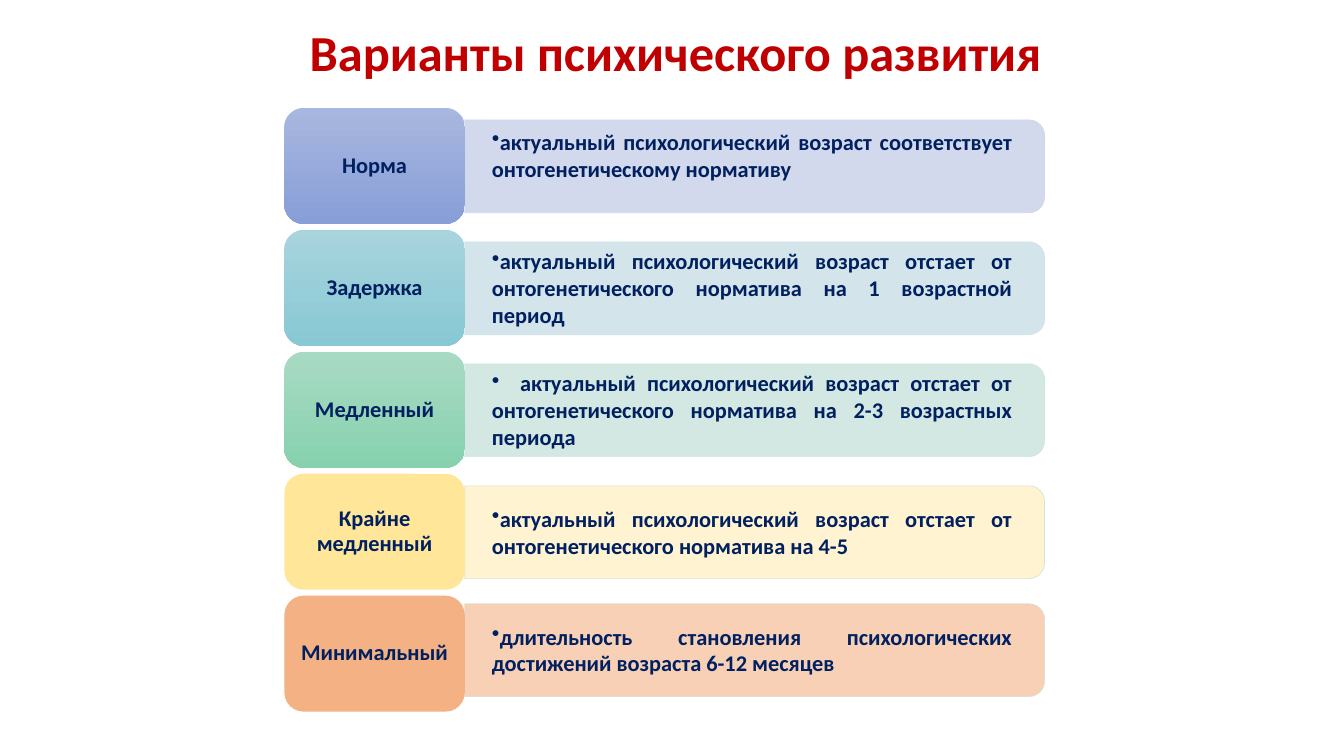
from lxml import etree
from pptx import Presentation
from pptx.dml.color import RGBColor
from pptx.enum.shapes import MSO_SHAPE
from pptx.enum.text import MSO_ANCHOR, MSO_AUTO_SIZE, PP_ALIGN
from pptx.oxml.ns import qn
from pptx.util import Inches, Pt

ROUNDED = MSO_SHAPE.ROUNDED_RECTANGLE
ROUNDED_TOP = MSO_SHAPE.ROUND_2_SAME_RECTANGLE
MIDDLE, TOP = MSO_ANCHOR.MIDDLE, MSO_ANCHOR.TOP
CENTER, JUSTIFY = PP_ALIGN.CENTER, PP_ALIGN.JUSTIFY
NO_AUTOFIT = MSO_AUTO_SIZE.NONE

FONT = "Calibri"
COLORS = {"title": "C00000", "text": "002060"}

TILE_LEFT, TILE_TOP, TILE_WIDTH, TILE_HEIGHT = 2.82, 1.07, 1.79, 1.15
ROW_PITCH = 1.21
BAR_LEFT, BAR_WIDTH, BAR_HEIGHT = 4.61, 5.75, 0.92
TEXT_WIDTH, TEXT_HEIGHT = 5.7, 0.83
FIRST_LINE_GAP = 0.28

# label, description, tile colours, bar colour, bar outline, bar offset
VARIANTS = [
    ("Норма",
     "актуальный психологический возраст соответствует онтогенетическому нормативу",
     ("A8B7DF", "889ED7"), "CFD5EA", "CFD5EA", 0.12),
    ("Задержка",
     "актуальный психологический возраст отстает от онтогенетического норматива "
     "на 1 возрастной период",
     ("A8D4DD", "88C8D4"), "CFE2E8", "CFE2E8", 0.12),
    ("Медленный",
     "\tактуальный психологический возраст отстает от онтогенетического норматива "
     "на 2-3 возрастных периода",
     ("A8DAC3", "87D1AF"), "CFE6E0", "CFE6E0", 0.12),
    ("Крайне медленный",
     "актуальный психологический возраст отстает от онтогенетического норматива на 4-5",
     ("FFE699",), "FFF2CC", "CFE5D4", 0.12),
    ("Минимальный",
     "длительность становления психологических достижений возраста 6-12 месяцев",
     ("F4B183",), "F8CBAD", "D5E3CF", 0.08),
]


class SlideBuilder:
    def __init__(self, slide):
        self.slide = slide

    def fill_text(self, frame, text, size, color, align, insets, anchor=MIDDLE):
        """Fill a text frame with one bold paragraph; insets run left, top, right, bottom."""
        frame.word_wrap = True
        frame.auto_size = NO_AUTOFIT
        frame.vertical_anchor = anchor
        (frame.margin_left, frame.margin_top,
         frame.margin_right, frame.margin_bottom) = map(Inches, insets)
        frame.text = text
        paragraph = frame.paragraphs[0]
        paragraph.alignment = align
        font = paragraph.runs[0].font
        font.name, font.size, font.bold = FONT, Pt(size), True
        font.color.rgb = RGBColor.from_string(COLORS[color])
        return paragraph

    def title(self, text):
        heading = self.slide.shapes.title
        heading.left, heading.top = Inches(2.26), Inches(0.13)
        heading.width, heading.height = Inches(9), Inches(0.84)
        paragraph = self.fill_text(heading.text_frame, text, 36, "title", CENTER,
                                   (0.1, 0.05, 0.1, 0.05))
        paragraph.line_spacing = 0.9

    def tile(self, label, top, colors):
        tile = self.slide.shapes.add_shape(
            ROUNDED, Inches(TILE_LEFT), Inches(top), Inches(TILE_WIDTH), Inches(TILE_HEIGHT))
        tile.shadow.inherit = False
        tile.line.fill.background()
        if len(colors) == 1:
            tile.fill.solid()
            tile.fill.fore_color.rgb = RGBColor.from_string(colors[0])
        else:
            tile.fill.gradient()
            tile.fill.gradient_angle = 270
            for stop, color in zip(tile.fill.gradient_stops, colors):
                stop.color.rgb = RGBColor.from_string(color)
        paragraph = self.fill_text(tile.text_frame, label, 16, "text", CENTER,
                                   (0.07, 0.03, 0.07, 0.03))
        paragraph.line_spacing = 0.9

    def bar(self, top, color, outline):
        """Draw an upright shape turned by 90 degrees, so its round corners face right."""
        turn = (BAR_WIDTH - BAR_HEIGHT) / 2
        bar = self.slide.shapes.add_shape(
            ROUNDED_TOP, Inches(BAR_LEFT + turn), Inches(top - turn),
            Inches(BAR_HEIGHT), Inches(BAR_WIDTH))
        bar.rotation = 90
        bar.shadow.inherit = False
        bar.fill.solid()
        bar.fill.fore_color.rgb = RGBColor.from_string(color)
        bar.line.color.rgb = RGBColor.from_string(outline)
        bar.line.width = Pt(0.5)
        for rgb in bar.element.spPr.iter(qn("a:srgbClr")):
            etree.SubElement(rgb, qn("a:alpha"), val="90000")

    def description(self, text, top, raised):
        box = self.slide.shapes.add_textbox(
            Inches(BAR_LEFT), Inches(top), Inches(TEXT_WIDTH), Inches(TEXT_HEIGHT))
        top_inset, anchor = (0.04, TOP) if raised else (0.14, MIDDLE)
        paragraph = self.fill_text(box.text_frame, text, 16, "text", JUSTIFY,
                                   (0.27, top_inset, 0.27, 0.14), anchor)
        paragraph.level = 1
        properties = paragraph._p.get_or_add_pPr()
        properties.set("marL", "0")
        properties.set("indent", "0")
        etree.SubElement(properties, qn("a:buChar"), char="•")
        if text.startswith("\t"):
            tabs = etree.SubElement(properties, qn("a:tabLst"))
            etree.SubElement(tabs, qn("a:tab"), pos=str(Inches(FIRST_LINE_GAP)), algn="l")


def main():
    presentation = Presentation()
    presentation.slide_width, presentation.slide_height = Inches(13.33), Inches(7.5)
    builder = SlideBuilder(presentation.slides.add_slide(presentation.slide_layouts[5]))
    builder.title("Варианты психического развития ")
    for row, (label, text, tile_colors, bar_color, outline, offset) in enumerate(VARIANTS):
        tile_top = TILE_TOP + row * ROW_PITCH
        bar_top = tile_top + offset
        builder.bar(bar_top, bar_color, outline)
        builder.description(text, bar_top + 0.04, raised=row == 0)
        builder.tile(label, tile_top, tile_colors)
    presentation.save("out.pptx")


if __name__ == "__main__":
    main()
